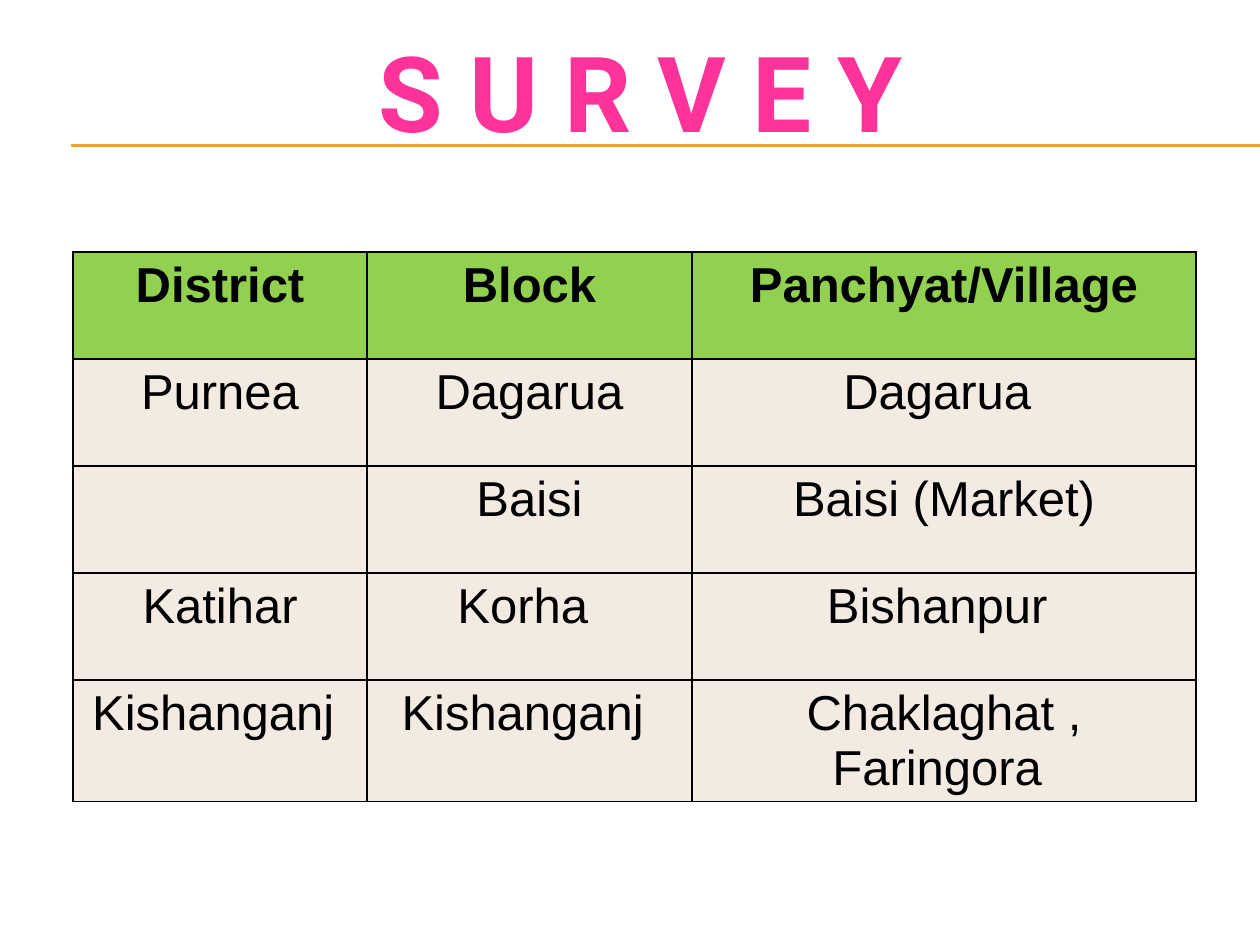
from lxml.etree import SubElement
from pptx import Presentation
from pptx.dml.color import RGBColor
from pptx.enum.shapes import MSO_CONNECTOR
from pptx.enum.text import MSO_ANCHOR, PP_ALIGN
from pptx.oxml.ns import qn
from pptx.util import Emu, Pt

ROWS = [
    ["District", "Block", "Panchyat/Village"],
    ["Purnea", "Dagarua", "Dagarua "],
    ["", "Baisi", "Baisi (Market)"],
    ["Katihar", "Korha ", "Bishanpur "],
    ["Kishanganj ", "Kishanganj ", "Chaklaghat , Faringora "],
]
COL_WIDTHS = [294, 325, 504]
ROW_HEIGHT = 107


def px(n):
    """Convert pixels at 126 to the inch into EMU."""
    return Emu(round(n * 914400 / 126))


def rgb(color):
    """Turn a hex string into a colour."""
    return RGBColor.from_string(color)


def format_text(tf, font, size, color, bold):
    """Centre the text and format its runs."""
    for p in tf.paragraphs:
        p.alignment = PP_ALIGN.CENTER
        p.font.size = Pt(size)
        for r in p.runs:
            r.font.name = font
            r.font.size = Pt(size)
            r.font.bold = bold
            r.font.color.rgb = rgb(color)


def add_rule(s, y):
    """Draw a thin orange line to the right edge of the slide."""
    line = s.shapes.add_connector(MSO_CONNECTOR.STRAIGHT, px(71), px(y), px(1260), px(y))
    line.line.color.rgb = rgb("F0A22E")
    line.line.width = Pt(0.75)
    SubElement(line._element.spPr, qn("a:effectLst"))


def set_title(s, text):
    """Place and format the slide title."""
    sp = s.shapes.title
    sp.left, sp.top, sp.width, sp.height = px(42), px(32), px(1197), px(116)
    tf = sp.text_frame
    tf.text = text
    tf.word_wrap = True
    tf.vertical_anchor = MSO_ANCHOR.MIDDLE
    format_text(tf, "Roboto", 60, "FF3399", True)


def add_borders(cell):
    """Give a cell black borders on all sides, placed before its fill."""
    tc_pr = cell._tc.get_or_add_tcPr()
    for i, side in enumerate(("lnL", "lnR", "lnT", "lnB")):
        ln = SubElement(tc_pr, qn(f"a:{side}"), w=str(Pt(1)))
        fill = SubElement(ln, qn("a:solidFill"))
        SubElement(fill, qn("a:srgbClr"), val="000000")
        tc_pr.insert(i, ln)


def add_survey_table(s):
    """Build the table of surveyed places."""
    shape = s.shapes.add_table(
        len(ROWS), len(COL_WIDTHS), px(73), px(252),
        px(sum(COL_WIDTHS)), px(ROW_HEIGHT * len(ROWS)))
    table = shape.table
    for col, width in zip(table.columns, COL_WIDTHS):
        col.width = px(width)
    for i, (row, texts) in enumerate(zip(table.rows, ROWS)):
        row.height = px(ROW_HEIGHT)
        for cell, text in zip(row.cells, texts):
            cell.text = text
            cell.fill.solid()
            cell.fill.fore_color.rgb = rgb("F3EAE2" if i else "92D050")
            add_borders(cell)
            format_text(cell.text_frame, "Arial", 28, "000000", i == 0)


def main():
    """Build the survey slide and save it."""
    prs = Presentation()
    prs.slide_width, prs.slide_height = px(1260), px(945)
    s = prs.slides.add_slide(prs.slide_layouts[5])
    for y in (145, 146):
        add_rule(s, y)
    set_title(s, "S U R V E Y")
    add_survey_table(s)
    prs.save("out.pptx")


if __name__ == "__main__":
    main()
